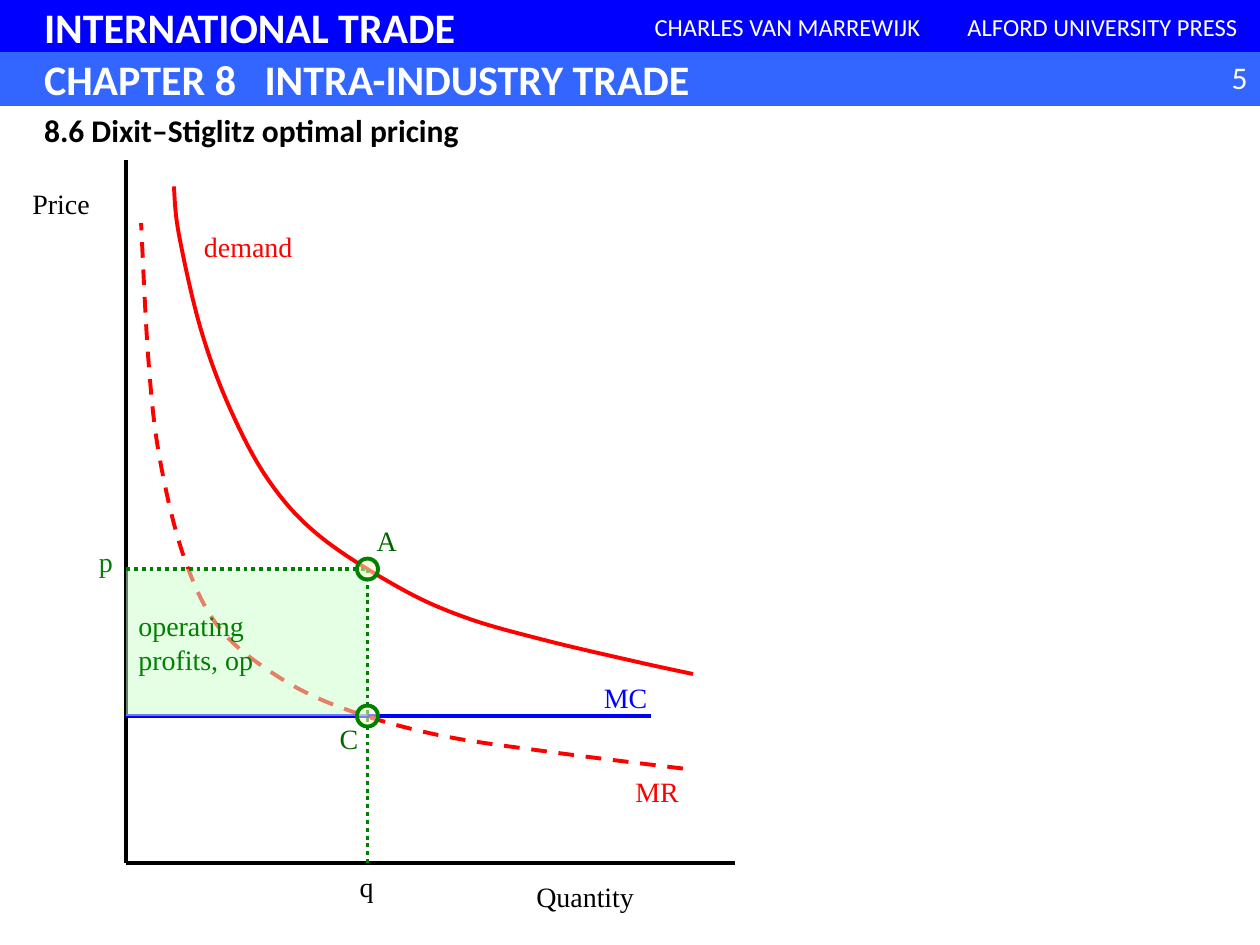
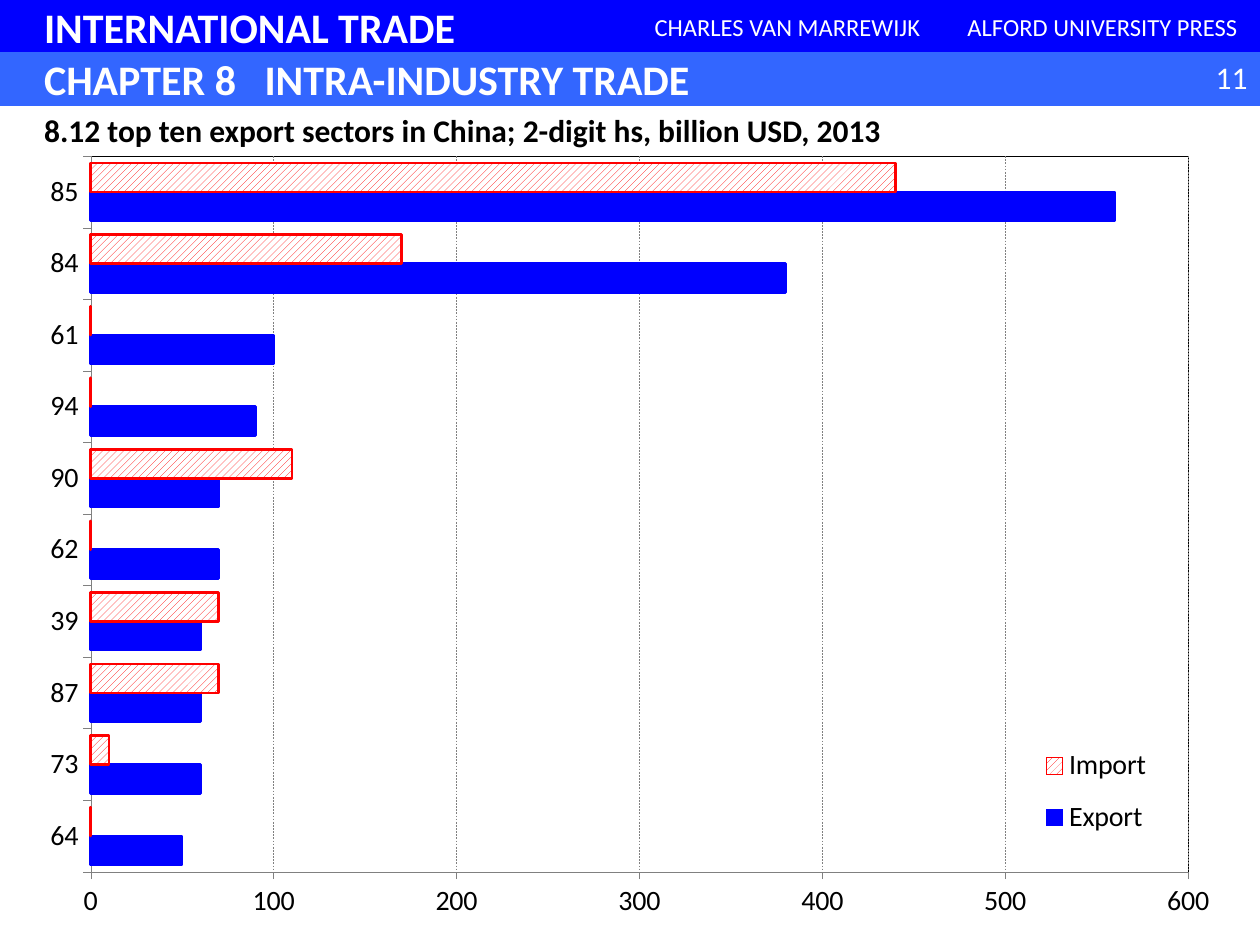
import pptx
import pptx.chart.data
import pptx.dml.color
import pptx.enum.chart
import pptx.enum.dml
import pptx.enum.shapes
import pptx.enum.text
import pptx.oxml
import pptx.oxml.ns
import pptx.util

RGB = pptx.dml.color.RGBColor
SHAPE = pptx.enum.shapes.MSO_SHAPE
ALIGN = pptx.enum.text.PP_ALIGN
ANCHOR = pptx.enum.text.MSO_ANCHOR
DASH = pptx.enum.dml.MSO_LINE
Pt = pptx.util.Pt
qn = pptx.oxml.ns.qn

# Colours and fonts
WHITE = RGB(0xFF, 0xFF, 0xFF)
BLACK = RGB(0, 0, 0)
GREY = RGB(0x80, 0x80, 0x80)
BLUE = RGB(0, 0, 0xFF)
SKY = RGB(0x33, 0x66, 0xFF)
RED = RGB(0xFF, 0, 0)
GREEN = RGB(0, 0x80, 0)
DARK_GREEN = RGB(0, 0x66, 0)
PALE_GREEN = RGB(0xCC, 0xFF, 0xCC)
PALE_YELLOW = RGB(0xFF, 0xFF, 0xCC)
SANS, SERIF = "Calibri", "Times New Roman"

# The slide is a grid of 100 columns by 75 rows, each a tenth of an inch
COLS, ROWS = 100, 75
BAND = ROWS / 18
LINE_W, THIN = 2.25, 0.25

# Diagram landmarks, in columns and rows
AXIS_X, AXIS_Y = 10, 68.5
Q_X, PRICE_Y, COST_Y = 29.17, 45.17, 56.83
DEMAND = [(55, 53.5), (50.4, 52.5), (43.2, 50.8), (36.9, 49), (31.6, 46.6), (25.3, 42.5),
          (21.3, 38.1), (18.2, 32.3), (15.9, 26), (14.2, 18.6), (13.8, 14.8)]
REVENUE = [(54.2, 61), (43.8, 59.7), (34.6, 58.3), (26.9, 56.1), (21.6, 53.4), (17.3, 49.7),
           (14.6, 44.2), (12.7, 36.5), (11.8, 28.8), (11.2, 17.7)]

# Sector: (export, import), from the bottom bar up
SECTORS = {"64": (50, 0), "73": (60, 10), "87": (60, 70), "39": (60, 70), "62": (70, 0),
           "90": (70, 110), "94": (90, 0), "61": (100, 0), "84": (380, 170), "85": (560, 440)}


def grid(*cells):
    return [pptx.util.Inches(c / 10) for c in cells]


def xml(tag, **attrs):
    node = pptx.oxml.parse_xml(f"<{tag} {pptx.oxml.ns.nsdecls(tag.split(':')[0])}/>")
    for key, value in attrs.items():
        node.set(key, str(value))
    return node


def add_run(p, text, size, color, font, bold=False):
    r = p.add_run()
    r.text = text
    r.font.size, r.font.bold, r.font.name = Pt(size), bold, font
    r.font.color.rgb = color


def style_line(line, color, width=LINE_W, dash=None):
    line.color.rgb = color
    line.width = Pt(width)
    if dash:
        line.dash_style = dash


def add_block(s, kind, box, fill, opacity=100):
    sp = s.shapes.add_shape(kind, *grid(*box))
    sp.shadow.inherit = False
    sp.fill.solid()
    sp.fill.fore_color.rgb = fill
    sp.line.fill.background()
    if opacity < 100:
        color = sp._element.spPr.find(qn("a:solidFill")).find(qn("a:srgbClr"))
        color.append(xml("a:alpha", val=opacity * 1000))
    sp.text_frame.vertical_anchor = ANCHOR.MIDDLE
    return sp


def add_band(s, box, fill, text, size, align, bold=False, indent=1, tab=None):
    sp = add_block(s, SHAPE.RECTANGLE, box, fill)
    style_line(sp.line, fill, 0.75)
    tf = sp.text_frame
    tf.margin_left, = grid(indent)
    p = tf.paragraphs[0]
    p.alignment = align
    if tab:
        stops = xml("a:tabLst")
        stops.append(xml("a:tab", pos=grid(tab)[0], algn="l"))
        p._p.get_or_add_pPr().append(stops)
    add_run(p, text, size, WHITE, SANS, bold)
    return sp


def add_text(s, box, text, size, color, font=SERIF, align=ALIGN.CENTER):
    tf = s.shapes.add_textbox(*grid(*box)).text_frame
    tf.word_wrap = font == SANS
    tf.paragraphs[0].alignment = align
    add_run(tf.paragraphs[0], text, size, color, font)


def add_line(s, start, end, color, dash=None):
    line = s.shapes.add_connector(pptx.enum.shapes.MSO_CONNECTOR.STRAIGHT,
                                  *grid(*start, *end))
    style_line(line.line, color, dash=dash)
    line._element.spPr.append(xml("a:effectLst"))


def add_curve(s, knots, color, dash=None):
    """Smooth open curve: each segment is a Bezier with Catmull-Rom handles."""
    start, *rest = [tuple(grid(*knot)) for knot in knots]
    builder = s.shapes.build_freeform(*start)
    builder.add_line_segments(rest, close=False)
    sp = builder.convert_to_shape()
    sp.shadow.inherit = False
    sp.fill.background()
    style_line(sp.line, color, dash=dash)

    pts = [(int(pt.get("x")), int(pt.get("y"))) for pt in sp._element.iter(qn("a:pt"))]
    ends = [pts[0], *pts, pts[-1]]
    segments = list(sp._element.iter(qn("a:lnTo")))
    for segment, a, b, c, d in zip(segments, ends, ends[1:], ends[2:], ends[3:]):
        leave = [q + (r - o) / 6 for o, q, r in zip(a, b, c)]
        arrive = [r - (t - q) / 6 for q, r, t in zip(b, c, d)]
        bezier = xml("a:cubicBezTo")
        for x, y in (leave, arrive, c):
            bezier.append(xml("a:pt", x=round(x), y=round(y)))
        segment.getparent().replace(segment, bezier)


def add_point(s, x, y, size=1.67):
    sp = add_block(s, SHAPE.OVAL, (x - size / 2, y - size / 2, size, size), PALE_YELLOW, 50)
    style_line(sp.line, GREEN)


def move_bands_to_layout(s):
    """Draw the shared bands and hand them to the slide's layout."""
    bands = [add_band(s, (0, 0, COLS, BAND), BLUE, "INTERNATIONAL TRADE", 24,
                      ALIGN.LEFT, True, 3.5)]
    for col, text in ((50, "CHARLES VAN MARREWIJK"), (75, "ALFORD UNIVERSITY PRESS")):
        bands.append(add_band(s, (col, 0, 25, BAND), BLUE, text, 14, ALIGN.CENTER))
    bands.append(add_band(s, (0, BAND, COLS, BAND), SKY, "CHAPTER 8\tINTRA-INDUSTRY TRADE",
                          24, ALIGN.LEFT, True, 3.5, tab=17.5))
    for band in bands:
        s.slide_layout.shapes._spTree.append(band._element)


def add_page(prs, number):
    s = prs.slides.add_slide(prs.slide_layouts[5])
    add_text(s, (93.3, 4.1, 6.7, 4), str(number), 18, WHITE, SANS, ALIGN.RIGHT)
    return s


def set_title(s, text, width):
    title = s.shapes.title
    title.left, title.top, title.width, title.height = grid(2.5, 8.33, width, 4)
    tf = title.text_frame
    tf.auto_size = pptx.enum.text.MSO_AUTO_SIZE.NONE
    tf.vertical_anchor = ANCHOR.TOP
    tf.paragraphs[0].alignment = ALIGN.LEFT
    add_run(tf.paragraphs[0], text, 18, BLACK, SANS, True)
    s.shapes._spTree.append(title._element)  # bring to front


def set_layout(parent, index, x, y, w, h, inner=False):
    """Place a part of the chart by shares of the chart's size."""
    for old in parent.findall(qn("c:layout")):
        parent.remove(old)
    layout, manual = xml("c:layout"), xml("c:manualLayout")
    if inner:
        manual.append(xml("c:layoutTarget", val="inner"))
    for tag in ("xMode", "yMode"):
        manual.append(xml(f"c:{tag}", val="edge"))
    for tag, share in zip("xywh", (x, y, w, h)):
        manual.append(xml(f"c:{tag}", val=share))
    layout.append(manual)
    parent.insert(index, layout)


def add_pricing_diagram(s):
    # Axes
    origin = (AXIS_X, AXIS_Y)
    add_line(s, (AXIS_X, 12.7), origin, BLACK)
    add_line(s, origin, (58.3, AXIS_Y), BLACK)
    # Curves and marginal cost
    add_curve(s, DEMAND, RED)
    add_line(s, (AXIS_X, COST_Y), (51.7, COST_Y), BLUE)
    add_curve(s, REVENUE, RED, DASH.DASH)
    # Operating profits
    profit = add_block(s, SHAPE.RECTANGLE,
                       (AXIS_X, PRICE_Y, Q_X - AXIS_X, COST_Y - PRICE_Y), PALE_GREEN, 50)
    tf = profit.text_frame
    for i, text in enumerate(("operating", "profits, op")):
        p = tf.add_paragraph() if i else tf.paragraphs[0]
        p.alignment = ALIGN.LEFT
        add_run(p, text, 16, GREEN, SERIF)
    # Optimal price and quantity
    optimum = (Q_X, PRICE_Y)
    add_line(s, optimum, (Q_X, AXIS_Y), GREEN, DASH.ROUND_DOT)
    add_line(s, (AXIS_X, PRICE_Y), optimum, GREEN, DASH.ROUND_DOT)
    for y in (PRICE_Y, COST_Y):
        add_point(s, Q_X, y)
    # Labels
    for text, x, y, w, color in (
            ("Price", 1, 14.3, 7.7, BLACK), ("Quantity", 40.8, 69.3, 11.3, BLACK),
            ("demand", 14.2, 17.7, 11, RED), ("MC", 46.7, 53.5, 5.9, BLUE),
            ("MR", 49.2, 61, 5.9, RED), ("q", 27.4, 68.5, 3.4, BLACK),
            ("p", 6.7, 42.7, 3.4, GREEN), ("C", 25.8, 56.8, 3.8, DARK_GREEN),
            ("A", 28.8, 41.1, 3.8, DARK_GREEN)):
        add_text(s, (x, y, w, 4), text, 16, color)


def add_sector_chart(s):
    data = pptx.chart.data.CategoryChartData()
    data.categories = list(SECTORS)
    for name, values in zip(("Export", "Import"), zip(*SECTORS.values())):
        data.add_series(name, values)
    top = 2 * BAND
    chart = s.shapes.add_chart(pptx.enum.chart.XL_CHART_TYPE.BAR_CLUSTERED,
                               *grid(0, top, COLS, ROWS - top), data).chart
    chart.has_title = False
    chart.font.name, chart.font.size = SANS, Pt(16)
    chart.font.color.rgb = BLACK
    # Bars
    plot = chart.plots[0]
    plot.gap_width, plot.overlap, plot.vary_by_categories = 48, 0, False
    exports, imports = plot.series
    exports.format.fill.solid()
    exports.format.fill.fore_color.rgb = BLUE
    hatch = imports.format.fill
    hatch.patterned()
    hatch.pattern = pptx.enum.dml.MSO_PATTERN.WIDE_UPWARD_DIAGONAL
    hatch.fore_color.rgb, hatch.back_color.rgb = RED, WHITE
    for series, color in ((exports, BLUE), (imports, RED)):
        style_line(series.format.line, color, 1.5)
    # Axes
    for axis in (chart.category_axis, chart.value_axis):
        axis.major_tick_mark = pptx.enum.chart.XL_TICK_MARK.OUTSIDE
        axis.tick_labels.font.size = Pt(16)
        style_line(axis.format.line, GREY, THIN)
    values = chart.value_axis
    values.minimum_scale, values.maximum_scale, values.major_unit = 0, 600, 100
    values.tick_labels.number_format = "#,##0"
    values.tick_labels.number_format_is_linked = False
    style_line(values.major_gridlines.format.line, GREY, THIN, DASH.DASH)
    # Plot frame
    area = chart._chartSpace.chart.plotArea
    set_layout(area, 0, 0.072, 0.061, 0.871, 0.852, inner=True)
    frame = xml("c:spPr")
    frame.append(xml("a:noFill"))
    border, ink = xml("a:ln", w=Pt(THIN)), xml("a:solidFill")
    ink.append(xml("a:srgbClr", val=BLACK))
    border.append(ink)
    frame.append(border)
    area.append(frame)
    # Legend
    chart.has_legend = True
    legend = chart.legend
    legend.include_in_layout = False
    legend.font.size = Pt(16)
    legend_xml = legend._element
    position = legend_xml.find(qn("c:legendPos"))
    set_layout(legend_xml, 0 if position is None else 1, 0.815, 0.745, 0.11, 0.145)


def main():
    prs = pptx.Presentation()
    prs.slide_width, prs.slide_height = grid(COLS, ROWS)

    s = add_page(prs, 5)
    move_bands_to_layout(s)
    add_pricing_diagram(s)
    set_title(s, "8.6 Dixit–Stiglitz optimal pricing", 35.2)

    s = add_page(prs, 11)
    add_sector_chart(s)
    set_title(s, "8.12 top ten export sectors in China; 2-digit hs, billion USD, 2013", 73.3)

    prs.save("out.pptx")


if __name__ == "__main__":
    main()
